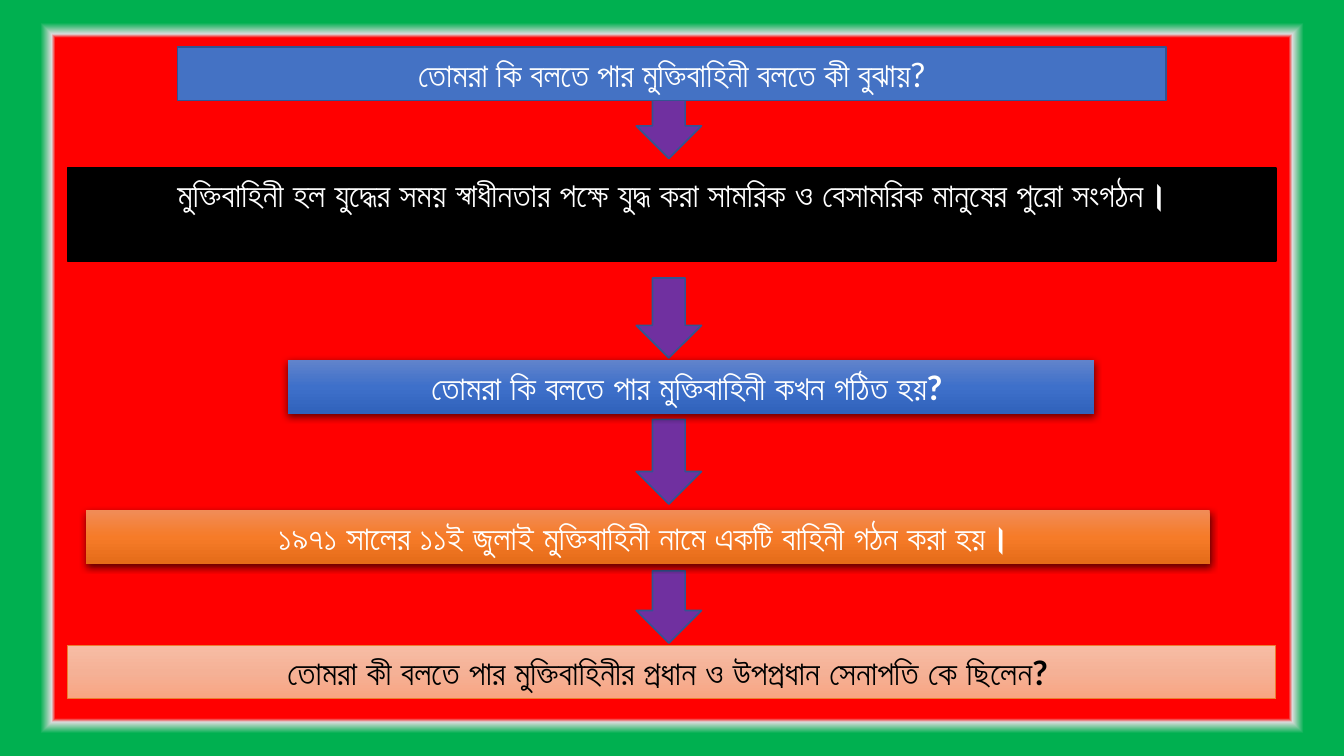
import pptx
import pptx.util
import pptx.dml.color
import pptx.enum.shapes
import pptx.enum.text
import pptx.oxml
import pptx.oxml.ns
import lxml.etree

Cm = pptx.util.Cm
Pt = pptx.util.Pt
Kind = pptx.enum.shapes.MSO_SHAPE
Fit = pptx.enum.text.MSO_AUTO_SIZE
Anchor = pptx.enum.text.MSO_ANCHOR
qn = pptx.oxml.ns.qn
space = pptx.oxml.ns.nsdecls("a")


def paint(fill, tone, root=None):
    if isinstance(tone, str):
        fill.solid()
        fill.fore_color.rgb = pptx.dml.color.RGBColor.from_string(tone)
        return
    fill.gradient()
    grad = root.xpath(".//a:gradFill")[0]
    stops = grad.find(qn("a:gsLst"))
    for stop in list(stops):
        stops.remove(stop)
    for place, color in tone:
        stop = lxml.etree.SubElement(stops, qn("a:gs"), pos=str(place * 1000))
        lxml.etree.SubElement(stop, qn("a:srgbClr"), val=color)


def write(shape, text, color="FFFFFF", bold=True, fit=Fit.SHAPE_TO_FIT_TEXT, anchor=Anchor.MIDDLE):
    frame = shape.text_frame
    frame.word_wrap = True
    frame.auto_size = fit
    frame.vertical_anchor = anchor
    para = frame.paragraphs[0]
    para.alignment = pptx.enum.text.PP_ALIGN.CENTER
    run = para.add_run()
    run.text = text
    run.font.name = "Lato"
    run.font.size = Pt(20)
    run.font.bold = bold
    paint(run.font.fill, color)


deck = pptx.Presentation()
deck.slide_width = Cm(28.22)
deck.slide_height = Cm(15.88)
slide = deck.slides.add_slide(deck.slide_layouts[6])

glow = [(9, "FF0000"), (90, "FF0000"), (91, "DBDBDB"), (94, "00B050"), (100, "00B050")]
paint(slide.background.fill, glow, slide.element)
grad = slide.element.xpath(".//a:gradFill")[0]
for line in grad.findall(qn("a:lin")):
    grad.remove(line)
grad.find(qn("a:gsLst")).addnext(pptx.oxml.parse_xml(
    f'<a:path {space} path="rect">'
    '<a:fillToRect l="50000" t="50000" r="50000" b="50000"/></a:path>'))

for top, high in [(1.17, 2.16), (5.84, 1.68), (8.81, 1.78), (11.99, 1.52)]:
    arrow = slide.shapes.add_shape(Kind.DOWN_ARROW, Cm(13.36), Cm(top), Cm(1.37), Cm(high))
    arrow.shadow.inherit = False
    paint(arrow.fill, "7030A0")
    paint(arrow.line.fill, "325491")
    arrow.line.width = Pt(1)

blue = [(0, "6183CB"), (50, "3E70CA"), (100, "3062BB")]
orange = [(0, "F18C57"), (50, "F67B28"), (100, "E56C19")]
peach = [(0, "F7BDA5"), (50, "F5B196"), (100, "F8A582")]
boxes = [
    ("তোমরা কি বলতে পার মুক্তিবাহিনী বলতে কী বুঝায়?",
     3.73, 0.99, 20.75, 1.12, "4472C4", "325491", 1, {"bold": False}),
    ("মুক্তিবাহিনী হল যুদ্ধের সময় স্বাধীনতার পক্ষে যুদ্ধ করা সামরিক ও বেসামরিক মানুষের পুরো সংগঠন।",
     1.42, 3.53, 25.37, 1.96, "000000", "000000", 1, {"fit": Fit.NONE, "anchor": Anchor.TOP}),
    ("তোমরা কি বলতে পার মুক্তিবাহিনী কখন গঠিত হয়? ",
     6.05, 7.57, 16.92, 1.12, blue, None, 0, {}),
    ("১৯৭১ সালের ১১ই জুলাই মুক্তিবাহিনী নামে একটি বাহিনী গঠন করা হয়। ",
     1.8, 10.72, 23.6, 1.12, orange, None, 0, {}),
    ("তোমরা কী বলতে পার মুক্তিবাহিনীর প্রধান ও উপপ্রধান সেনাপতি কে ছিলেন? ",
     1.42, 13.56, 25.37, 1.12, peach, "ED7D31", 0.5, {"color": "000000"}),
]
for text, left, top, wide, high, tone, edge, width, style in boxes:
    box = slide.shapes.add_shape(Kind.RECTANGLE, Cm(left), Cm(top), Cm(wide), Cm(high))
    box.shadow.inherit = False
    paint(box.fill, tone, box.element)
    if not isinstance(tone, str):
        box.fill.gradient_angle = 270
    if edge:
        paint(box.line.fill, edge)
        box.line.width = Pt(width)
    else:
        box.line.fill.background()
        box.element.spPr.find(qn("a:effectLst")).append(pptx.oxml.parse_xml(
            f'<a:outerShdw {space} blurRad="57150" dist="19050" dir="5400000" algn="ctr" rotWithShape="0">'
            '<a:srgbClr val="000000"><a:alpha val="63000"/></a:srgbClr></a:outerShdw>'))
    write(box, text, **style)

deck.save("out.pptx")
